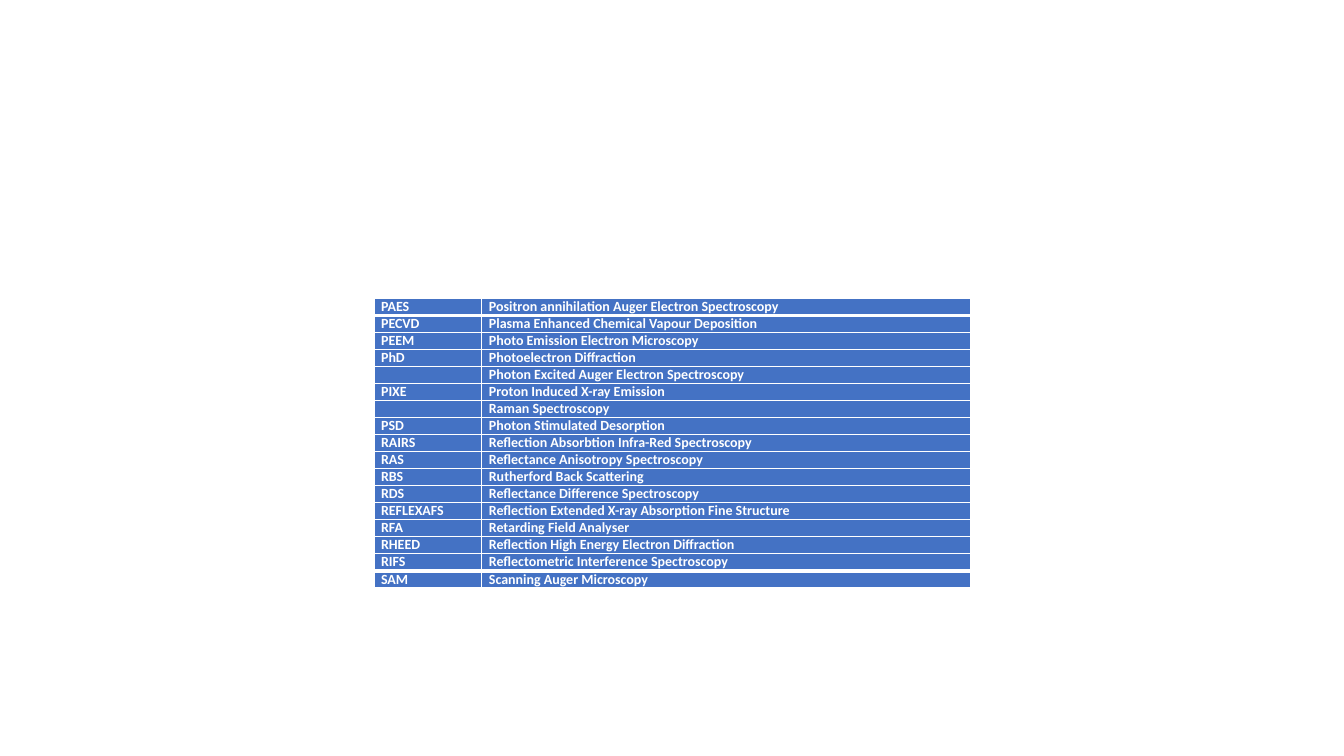
from lxml.etree import SubElement
from pptx import Presentation
from pptx.dml.color import RGBColor
from pptx.enum.text import PP_ALIGN
from pptx.oxml.ns import qn
from pptx.util import Inches, Pt

TERMS = [
    ("PAES", "Positron annihilation Auger Electron Spectroscopy"),
    ("PECVD", "Plasma Enhanced Chemical Vapour Deposition"),
    ("PEEM", "Photo Emission Electron Microscopy"),
    ("PhD", "Photoelectron Diffraction"),
    ("", "Photon Excited Auger Electron Spectroscopy"),
    ("PIXE", "Proton Induced X-ray Emission"),
    ("", "Raman Spectroscopy"),
    ("PSD", "Photon Stimulated Desorption"),
    ("RAIRS", "Reflection Absorbtion Infra-Red Spectroscopy"),
    ("RAS", "Reflectance Anisotropy Spectroscopy"),
    ("RBS", "Rutherford Back Scattering"),
    ("RDS", "Reflectance Difference Spectroscopy"),
    ("REFLEXAFS", "Reflection Extended X-ray Absorption Fine Structure"),
    ("RFA", "Retarding Field Analyser"),
    ("RHEED", "Reflection High Energy Electron Diffraction"),
    ("RIFS", "Reflectometric Interference Spectroscopy"),
    ("SAM", "Scanning Auger Microscopy"),
]
WIDTHS = (1.07, 4.85)
LEFT, TOP, HEIGHT = 3.71, 2.96, 2.83
BLUE = RGBColor(0x44, 0x72, 0xC4)
WHITE = RGBColor(0xFF, 0xFF, 0xFF)
FONT, SIZE = "Calibri", 10
THIN, THICK = 1, 3


def add_edge(cell, side, width):
    line = SubElement(cell._tc.get_or_add_tcPr(), qn(f"a:ln{side}"), w=str(Pt(width)))
    fill = SubElement(line, qn("a:solidFill"))
    SubElement(fill, qn("a:srgbClr"), val=str(WHITE))


def fill_cell(cell, text, above, below):
    for side, width in (("L", THIN), ("R", THIN), ("T", above), ("B", below)):
        add_edge(cell, side, width)
    cell.fill.solid()
    cell.fill.fore_color.rgb = BLUE
    cell.margin_left = cell.margin_right = Inches(0.07)
    cell.margin_top = cell.margin_bottom = 0
    para = cell.text_frame.paragraphs[0]
    para.alignment = PP_ALIGN.JUSTIFY
    if not text:
        SubElement(para._p, qn("a:endParaRPr"), sz=str(SIZE * 100))
        return
    run = para.add_run()
    run.text = text
    run.font.name, run.font.size, run.font.bold = FONT, Pt(SIZE), True
    run.font.color.rgb = WHITE


def main():
    """Build the slide with the table of surface science acronyms."""
    deck = Presentation()
    deck.slide_width, deck.slide_height = Inches(13.33), Inches(7.5)
    slide = deck.slides.add_slide(deck.slide_layouts[6])
    count = len(TERMS)
    table = slide.shapes.add_table(
        count, len(WIDTHS), Inches(LEFT), Inches(TOP),
        Inches(sum(WIDTHS)), Inches(HEIGHT)).table
    for col, width in zip(table.columns, WIDTHS):
        col.width = Inches(width)
    rules = [THIN, THICK] + [THIN] * (count - 3) + [THICK, THIN]
    for i, term in enumerate(TERMS):
        table.rows[i].height = Inches(HEIGHT / count)
        for j, text in enumerate(term):
            fill_cell(table.cell(i, j), text, rules[i], rules[i + 1])
    deck.save("out.pptx")


if __name__ == "__main__":
    main()
